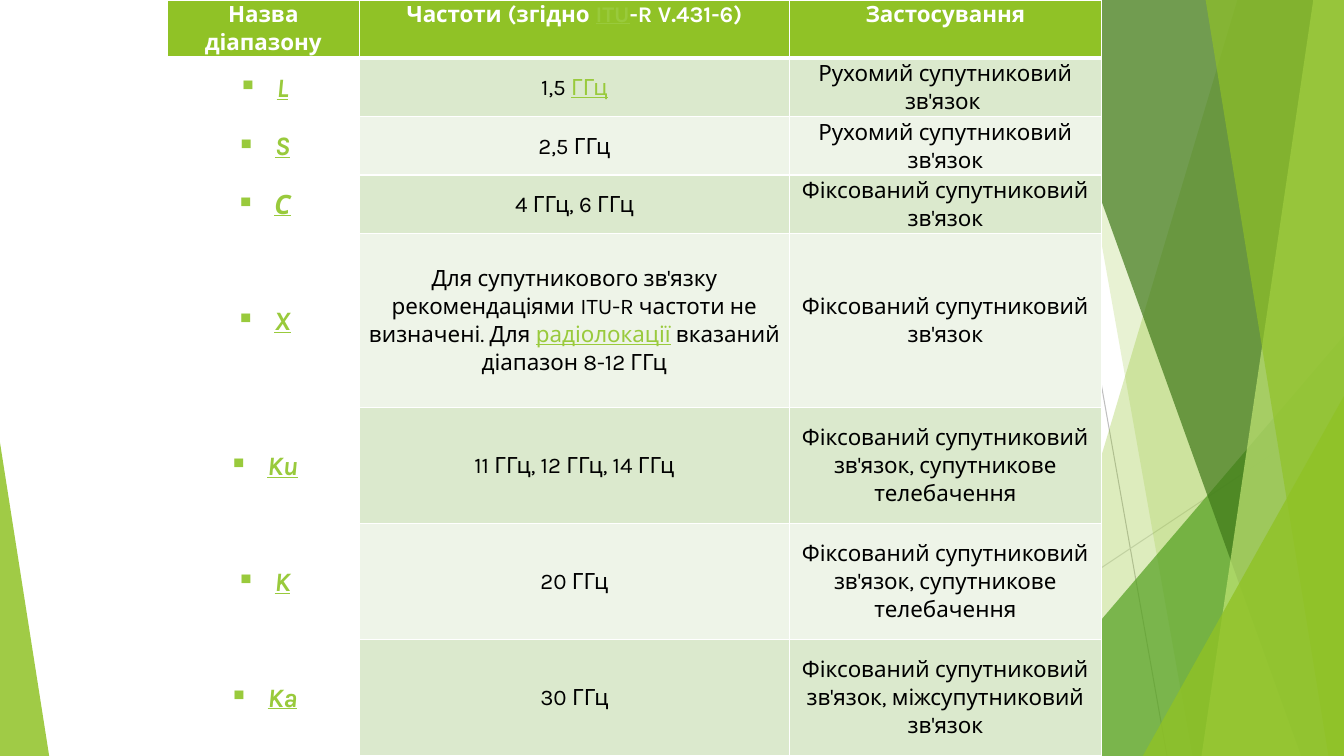
from lxml import etree
from pptx import Presentation
from pptx.dml.color import RGBColor
from pptx.enum import shapes, text
from pptx.oxml import ns
from pptx.util import Cm, Pt

WHITE = RGBColor(0xFF, 0xFF, 0xFF)
BLACK = RGBColor(0, 0, 0)
LIME = RGBColor(0x90, 0xC2, 0x26)
PALE_LIME = RGBColor(0xC0, 0xE4, 0x74)
GREEN = RGBColor(0x54, 0xA0, 0x21)
DARK_GREEN = RGBColor(0x3F, 0x78, 0x19)
LINK = RGBColor(0x99, 0xCA, 0x3C)
BANDS = [RGBColor(0xDB, 0xE9, 0xCD), RGBColor(0xEE, 0xF4, 0xE8)]
GREY = RGBColor(0xBF, 0xBF, 0xBF)
LIGHT_GREY = RGBColor(0xD9, 0xD9, 0xD9)
WIDTH, HEIGHT = 33.87, 19.05


def add_xml(parent, tag, **attributes):
    return etree.SubElement(parent, ns.qn(tag), attributes)


def write_cell(cell, content, fill, size=16, colour=BLACK, bold=False, italic=False,
               anchor=text.MSO_ANCHOR.MIDDLE, spacing=0, bullet=None, top=1, bottom=1):
    """Fill one table cell; parts of the content between asterisks look like links."""
    cell.margin_left = cell.margin_right = Cm(0.15)
    cell.margin_top = cell.margin_bottom = 0
    cell.vertical_anchor = anchor
    properties = cell._tc.get_or_add_tcPr()
    for side, width in (("L", 1), ("R", 1), ("T", top), ("B", bottom)):
        border = add_xml(properties, f"a:ln{side}", w=str(Pt(width)))
        add_xml(add_xml(border, "a:solidFill"), "a:srgbClr", val=str(WHITE))
    cell.fill.solid()
    cell.fill.fore_color.rgb = fill

    paragraph = cell.text_frame.paragraphs[0]
    paragraph.alignment = text.PP_ALIGN.CENTER
    paragraph.line_spacing = 1.07
    paragraph.space_before = paragraph.space_after = Pt(spacing)
    if bullet:
        paragraph_properties = paragraph._p.get_or_add_pPr()
        paragraph_properties.set("marL", str(Cm(0.97)))
        paragraph_properties.set("indent", str(-Cm(0.97)))
        add_xml(paragraph_properties, "a:buChar", char=bullet)
    for index, part in enumerate(content.split("*")):
        if not part:
            continue
        is_link = index % 2 == 1
        run = paragraph.add_run()
        run.text = part
        run.font.name = "Karla"
        run.font.size = Pt(size)
        run.font.bold = bold
        run.font.italic = italic
        run.font.underline = is_link
        run.font.color.rgb = LINK if is_link else colour


presentation = Presentation()
presentation.slide_width, presentation.slide_height = Cm(WIDTH), Cm(HEIGHT)
slide = presentation.slides.add_slide(presentation.slide_layouts[6])

# Thin lines behind the facets
for x1, y1, x2, y2, colour in [
    (26.04, 0, 29.41, HEIGHT, GREY),
    (WIDTH, 10.24, 20.62, HEIGHT, LIGHT_GREY),
]:
    line = slide.shapes.add_connector(
        shapes.MSO_CONNECTOR.STRAIGHT, Cm(x1), Cm(y1), Cm(x2), Cm(y2))
    line.line.color.rgb = colour
    line.line.width = Pt(0.75)
    add_xml(line._element.spPr, "a:effectLst")

# Facets: ("band", top x, bottom x) reaches the right edge of the slide;
# ("triangle", left, top, right, apex) stands on its bottom edge
for outline, colour, opacity in [
    (("band", 31.19, 25.5), LIME, 30),
    (("band", 26.67, 30.05), LIME, 20),
    (("triangle", 24.82, 8.46, WIDTH, 1), GREEN, 72),
    (("band", 25.93, 32.79), DARK_GREEN, 70),
    (("band", 33.1, 30.28), PALE_LIME, 70),
    (("band", 30.38, 33.48), LIME, 65),
    (("triangle", 28.8, 9.98, WIDTH, 1), LIME, 80),
    (("triangle", 0, 11.15, 1.24, 0), LIME, 85),
]:
    if outline[0] == "band":
        _, top_x, bottom_x = outline
        builder = slide.shapes.build_freeform(Cm(top_x), Cm(-0.02))
        builder.add_line_segments([
            (Cm(WIDTH), Cm(-0.02)), (Cm(WIDTH), Cm(HEIGHT)), (Cm(bottom_x), Cm(HEIGHT))])
        facet = builder.convert_to_shape()
    else:
        _, left, top, right, apex = outline
        facet = slide.shapes.add_shape(
            shapes.MSO_SHAPE.ISOSCELES_TRIANGLE,
            Cm(left), Cm(top), Cm(right - left), Cm(HEIGHT - top))
        facet.adjustments[0] = apex
    facet.shadow.inherit = False
    facet.line.fill.background()
    facet.fill.solid()
    facet.fill.fore_color.rgb = colour
    colour_xml = facet._element.spPr.find(".//" + ns.qn("a:srgbClr"))
    add_xml(colour_xml, "a:alpha", val=str(opacity * 1000))

# Table of satellite bands
HEADINGS = ["Назва діапазону", "Частоти (згідно *ITU*-R V.431-6)", "Застосування"]
MOBILE = "Рухомий супутниковий зв'язок"
FIXED = "Фіксований супутниковий зв'язок"
BROADCAST = FIXED + ", супутникове телебачення"
SATELLITE_BANDS = [
    ("L", "1,5 *ГГц*", MOBILE + " "),
    ("S", "2,5 ГГц", MOBILE),
    ("С", "4 ГГц, 6 ГГц", FIXED),
    ("X", "Для супутникового зв'язку рекомендаціями ITU-R частоти не визначені. "
          "Для *радіолокації* вказаний діапазон 8-12 ГГц", FIXED),
    ("Ku", "11 ГГц, 12 ГГц, 14 ГГц", BROADCAST),
    ("K", "20 ГГц", BROADCAST),
    ("Ka", "30 ГГц", FIXED + ", міжсупутниковий зв'язок"),
]
COLUMN_WIDTHS = [4.83, 10.85, 7.85]
ROW_HEIGHTS = [1.47] * 4 + [4.39] + [2.92] * 3

table = slide.shapes.add_table(
    len(ROW_HEIGHTS), len(COLUMN_WIDTHS), Cm(4.22), 0,
    Cm(sum(COLUMN_WIDTHS)), Cm(sum(ROW_HEIGHTS))).table
for column, width in zip(table.columns, COLUMN_WIDTHS):
    column.width = Cm(width)
for row, height in zip(table.rows, ROW_HEIGHTS):
    row.height = Cm(height)

for column, heading in enumerate(HEADINGS):
    write_cell(table.cell(0, column), heading, LIME, colour=WHITE, bold=True,
               anchor=text.MSO_ANCHOR.TOP, bottom=3)
for row, (name, frequency, usage) in enumerate(SATELLITE_BANDS, start=1):
    top = 3 if row == 1 else 1
    write_cell(table.cell(row, 0), f"*{name}*", WHITE, size=19, bold=True, italic=True,
               bullet="▪", top=top)
    for column, content in enumerate((frequency, usage), start=1):
        write_cell(table.cell(row, column), content, BANDS[(row - 1) % 2],
                   spacing=12, top=top)

presentation.save("out.pptx")
